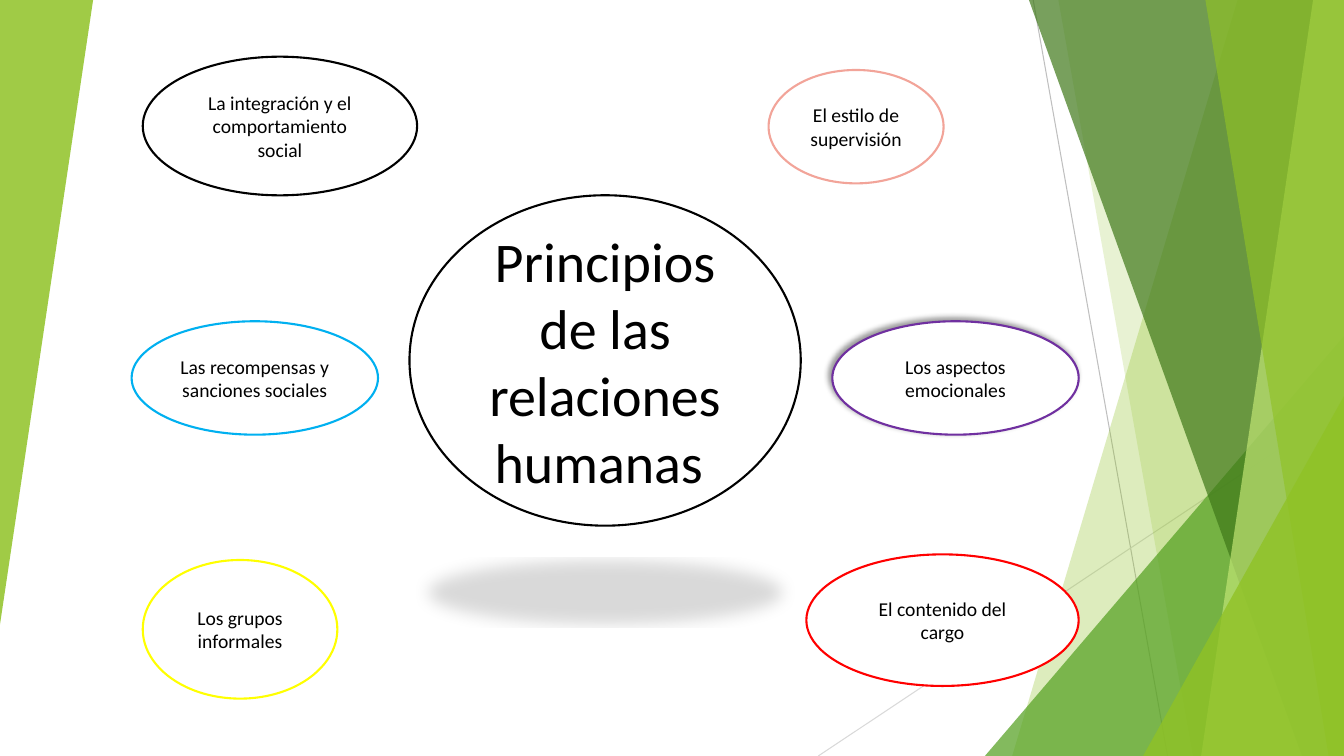
from lxml import etree
from pptx import Presentation
from pptx.dml.color import RGBColor
from pptx.enum.shapes import MSO_CONNECTOR, MSO_SHAPE
from pptx.enum.text import MSO_ANCHOR, PP_ALIGN
from pptx.oxml import parse_xml
from pptx.oxml.ns import nsdecls, qn
from pptx.util import Pt

LINE = MSO_CONNECTOR.STRAIGHT
TRIANGLE, ELLIPSE = MSO_SHAPE.ISOSCELES_TRIANGLE, MSO_SHAPE.OVAL
CENTER, MIDDLE = PP_ALIGN.CENTER, MSO_ANCHOR.MIDDLE
W, H = 960, 540


def rgb(code):
    return RGBColor.from_string(code)


def style_facet(sp, color, opacity):
    """Give a background facet a translucent fill, no line and no shadow."""
    sp.shadow.inherit = False
    sp.line.fill.background()
    sp.fill.solid()
    sp.fill.fore_color.rgb = rgb(color)
    clr = sp.fill._xPr.find(".//" + qn("a:srgbClr"))
    etree.SubElement(clr, qn("a:alpha")).set("val", str(opacity * 1000))


prs = Presentation()
prs.slide_width, prs.slide_height = Pt(W), Pt(H)
s = prs.slides.add_slide(prs.slide_layouts[6])

# Thin background lines: start, end, colour
for x1, y1, x2, y2, color in [
    (738, 0, 834, H, "BFBFBF"),
    (W, 290, 584.5, H, "D9D9D9"),
]:
    line = s.shapes.add_connector(LINE, Pt(x1), Pt(y1), Pt(x2), Pt(y2))
    line.line.color.rgb = rgb(color)
    line.line.width = Pt(0.75)
    etree.SubElement(line._element.spPr, qn("a:effectLst"))

# Bands run from a slanted left side (top x, bottom x) to the right slide edge;
# triangles have a left, top, width, height and rotation.
facets = [
    ("band", (884, 723), "90C226", 30),
    ("band", (756, 852), "90C226", 20),
    ("triangle", (703.5, 240, 256.5, 300, 0), "54A021", 72),
    ("band", (735, 930), "3F7819", 70),
    ("band", (938, 858), "C0E474", 70),
    ("band", (861, 949), "90C226", 65),
    ("triangle", (816.5, 283, 143.5, 257, 0), "90C226", 80),
    ("triangle", (0, 0, 66.5, 446, 180), "90C226", 85),
]
for kind, place, color, opacity in facets:
    if kind == "band":
        top_x, bottom_x = place
        outline = s.shapes.build_freeform(top_x, 0, scale=Pt(1))
        outline.add_line_segments([(W, 0), (W, H), (bottom_x, H)])
        sp = outline.convert_to_shape()
    else:
        *box, rotation = place
        sp = s.shapes.add_shape(TRIANGLE, *map(Pt, box))
        sp.adjustments[0] = 1
        sp.rotation = rotation
    style_facet(sp, color, opacity)

# Shadows: attributes of a:outerShdw and opacity
below = ('blurRad="152400" dist="317500" dir="5400000" sx="90000" sy="-19000" '
         'algn="b" rotWithShape="0"', 15)
upper_left = ('blurRad="50800" dist="38100" dir="13500000" algn="br" '
              'rotWithShape="0"', 40)

# Ellipses: text, left, top, width, height, line colour, text size, shadow
ellipses = [
    ("La integración y el comportamiento social",
     102, 40.5, 196, 99, "000000", 14, None),
    ("Principios de las relaciones humanas ",
     292.5, 139.5, 279.5, 236, "000000", 40, below),
    ("Los grupos informales", 102, 400, 139, 99, "FFFF00", 14, None),
    ("El contenido del cargo", 576, 396, 194.5, 94, "FF0000", 14, None),
    ("Los aspectos emocionales",
     594.5, 229.5, 176, 81, "7030A0", 14, upper_left),
    ("Las recompensas y sanciones sociales",
     94, 229.5, 176, 81, "00B0F0", 14, None),
    ("El estilo de supervisión", 549, 50, 125, 81, "F2A499", 14, None),
]
for text, x, y, w, h, color, size, shadow in ellipses:
    sp = s.shapes.add_shape(ELLIPSE, Pt(x), Pt(y), Pt(w), Pt(h))
    sp.shadow.inherit = False
    sp.fill.solid()
    sp.fill.fore_color.rgb = rgb("FFFFFF")
    sp.line.color.rgb = rgb(color)
    sp.line.width = Pt(1.5)
    if shadow:
        attributes, opacity = shadow
        sp._element.spPr.find(qn("a:effectLst")).append(parse_xml(
            f'<a:outerShdw {nsdecls("a")} {attributes}><a:srgbClr val="000000">'
            f'<a:alpha val="{opacity * 1000}"/></a:srgbClr></a:outerShdw>'))
    tf = sp.text_frame
    tf.text = text
    tf.word_wrap = True
    tf.vertical_anchor = MIDDLE
    p = tf.paragraphs[0]
    p.alignment = CENTER
    r = p.runs[0]
    r.font.name = "Calibri"
    r.font.size = Pt(size)
    r.font.color.rgb = rgb("000000")

prs.save("out.pptx")
